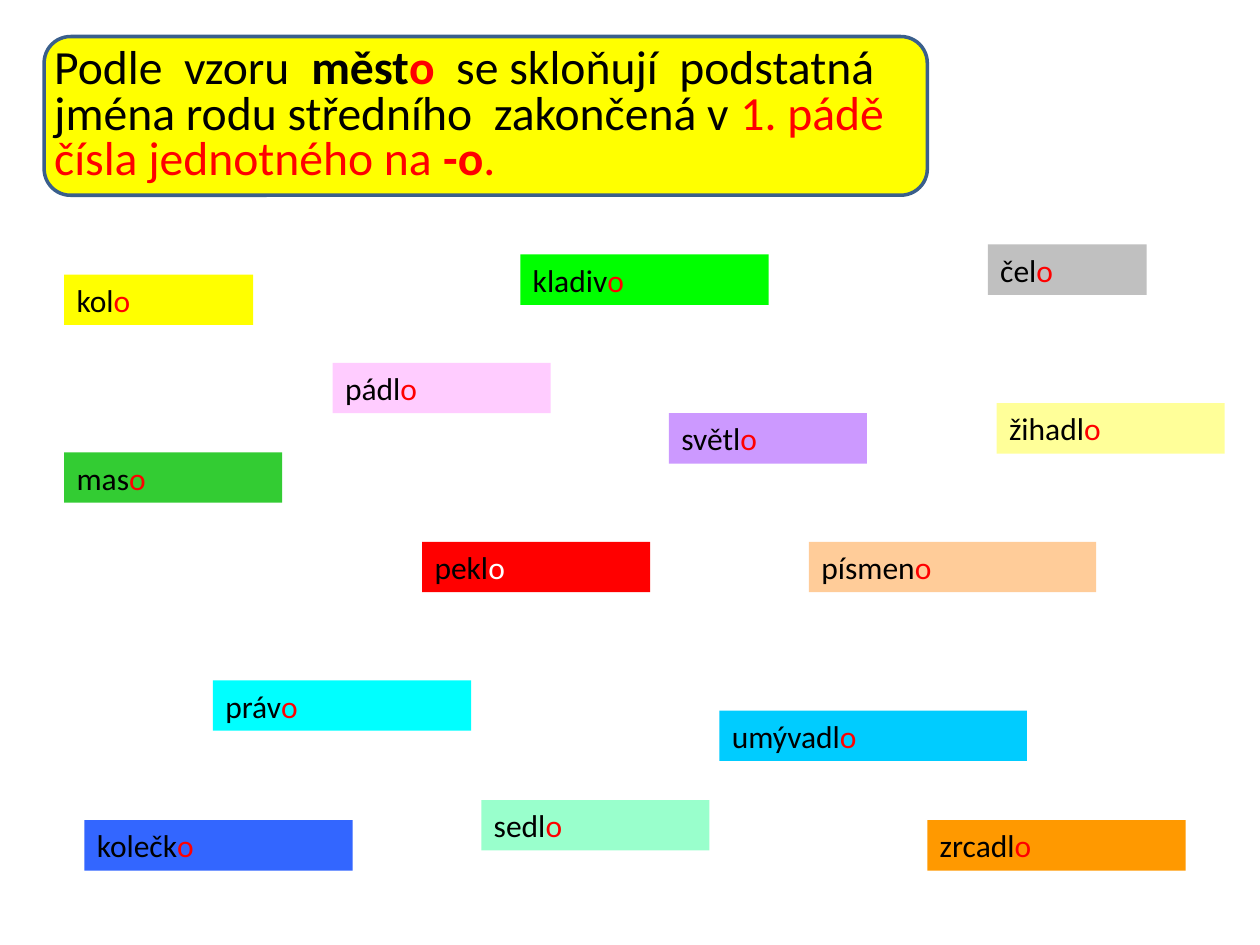
from pptx import Presentation
from pptx.dml.color import RGBColor
from pptx.enum.shapes import MSO_SHAPE
from pptx.enum.text import MSO_ANCHOR, MSO_AUTO_SIZE, PP_ALIGN
from pptx.util import Inches, Pt

FONT = "Calibri"
BLACK = RGBColor(0x00, 0x00, 0x00)
WHITE = RGBColor(0xFF, 0xFF, 0xFF)
RED = RGBColor(0xFF, 0x00, 0x00)
YELLOW = RGBColor(0xFF, 0xFF, 0x00)
NAVY = RGBColor(0x3A, 0x5F, 0x8C)
PINK = RGBColor(0xFF, 0xCC, 0xFF)
GREEN = RGBColor(0x00, 0xFF, 0x00)
ORANGE = RGBColor(0xFF, 0x99, 0x00)
PALE_YELLOW = RGBColor(0xFF, 0xFF, 0x99)
VIOLET = RGBColor(0xCC, 0x99, 0xFF)
GRASS = RGBColor(0x33, 0xCC, 0x33)
PEACH = RGBColor(0xFF, 0xCC, 0x99)
CYAN = RGBColor(0x00, 0xFF, 0xFF)
BLUE = RGBColor(0x33, 0x66, 0xFF)
SKY = RGBColor(0x00, 0xCC, 0xFF)
GREY = RGBColor(0xC0, 0xC0, 0xC0)
MINT = RGBColor(0x99, 0xFF, 0xCC)

RULE_LINES = [
    [("Podle  vzoru  ", BLACK, False), ("měst", BLACK, True), ("o", RED, True),
     ("  se skloňují  podstatná", BLACK, False)],
    [("jména rodu středního  zakončená v ", BLACK, False), ("1. pádě", RED, False)],
    [("čísla jednotného na ", RED, False), ("-o", RED, True), (".", RED, False)],
]

ENDING = "o"
CARD_HEIGHT = 0.4
CARDS = [
    ("kol", 0.51, 2.18, 1.5, YELLOW),
    ("pádl", 2.64, 2.88, 1.73, PINK),
    ("kladiv", 4.13, 2.02, 1.97, GREEN),
    ("zrcadl", 7.36, 6.51, 2.05, ORANGE),
    ("žihadl", 7.91, 3.2, 1.81, PALE_YELLOW),
    ("světl", 5.31, 3.28, 1.57, VIOLET),
    ("mas", 0.51, 3.59, 1.73, GRASS),
    ("pekl", 3.35, 4.3, 1.81, RED),
    ("písmen", 6.42, 4.3, 2.28, PEACH),
    ("práv", 1.69, 5.4, 2.05, CYAN),
    ("kolečk", 0.67, 6.51, 2.13, BLUE),
    ("umývadl", 5.71, 5.64, 2.44, SKY),
    ("čel", 7.84, 1.94, 1.26, GREY),
    ("sedl", 3.82, 6.35, 1.81, MINT),
]


def add_run(paragraph, text, size, color, bold=False):
    run = paragraph.add_run()
    run.text = text
    run.font.name = FONT
    run.font.size = Pt(size)
    run.font.bold = bold
    run.font.color.rgb = color


def add_box(slide, kind, left, top, width, height, fill):
    shape = slide.shapes.add_shape(
        kind, Inches(left), Inches(top), Inches(width), Inches(height))
    shape.shadow.inherit = False
    shape.fill.solid()
    shape.fill.fore_color.rgb = fill
    shape.line.fill.background()
    return shape


def add_rule(slide):
    panel = add_box(slide, MSO_SHAPE.ROUNDED_RECTANGLE, 0.35, 0.29, 7.01, 1.26, YELLOW)
    panel.line.color.rgb = NAVY
    panel.line.width = Pt(2)

    title = slide.shapes.title
    panel._element.getparent().append(title._element)
    title.left, title.top = Inches(0), Inches(0.3)
    title.width, title.height = Inches(10), Inches(1.25)
    frame = title.text_frame
    frame.word_wrap = True
    frame.auto_size = MSO_AUTO_SIZE.NONE
    frame.vertical_anchor = MSO_ANCHOR.MIDDLE
    frame.margin_left = Inches(0.43)
    paragraph = frame.paragraphs[0]
    paragraph.alignment = PP_ALIGN.LEFT
    paragraph.line_spacing = 0.8
    for index, line in enumerate(RULE_LINES):
        if index:
            paragraph.add_line_break()
        for text, color, bold in line:
            add_run(paragraph, text, 27.2, color, bold)


def add_card(slide, stem, left, top, width, fill):
    card = add_box(slide, MSO_SHAPE.RECTANGLE, left, top, width, CARD_HEIGHT, fill)
    frame = card.text_frame
    frame.word_wrap = True
    frame.auto_size = MSO_AUTO_SIZE.SHAPE_TO_FIT_TEXT
    frame.vertical_anchor = MSO_ANCHOR.TOP
    paragraph = frame.paragraphs[0]
    paragraph.alignment = PP_ALIGN.LEFT
    add_run(paragraph, stem, 18, BLACK)
    add_run(paragraph, ENDING, 18, WHITE if fill == RED else RED)


def main():
    presentation = Presentation()
    presentation.slide_width = Inches(10)
    presentation.slide_height = Inches(7.5)
    slide = presentation.slides.add_slide(presentation.slide_layouts[5])
    add_rule(slide)
    for card in CARDS:
        add_card(slide, *card)
    presentation.save("out.pptx")


if __name__ == "__main__":
    main()
